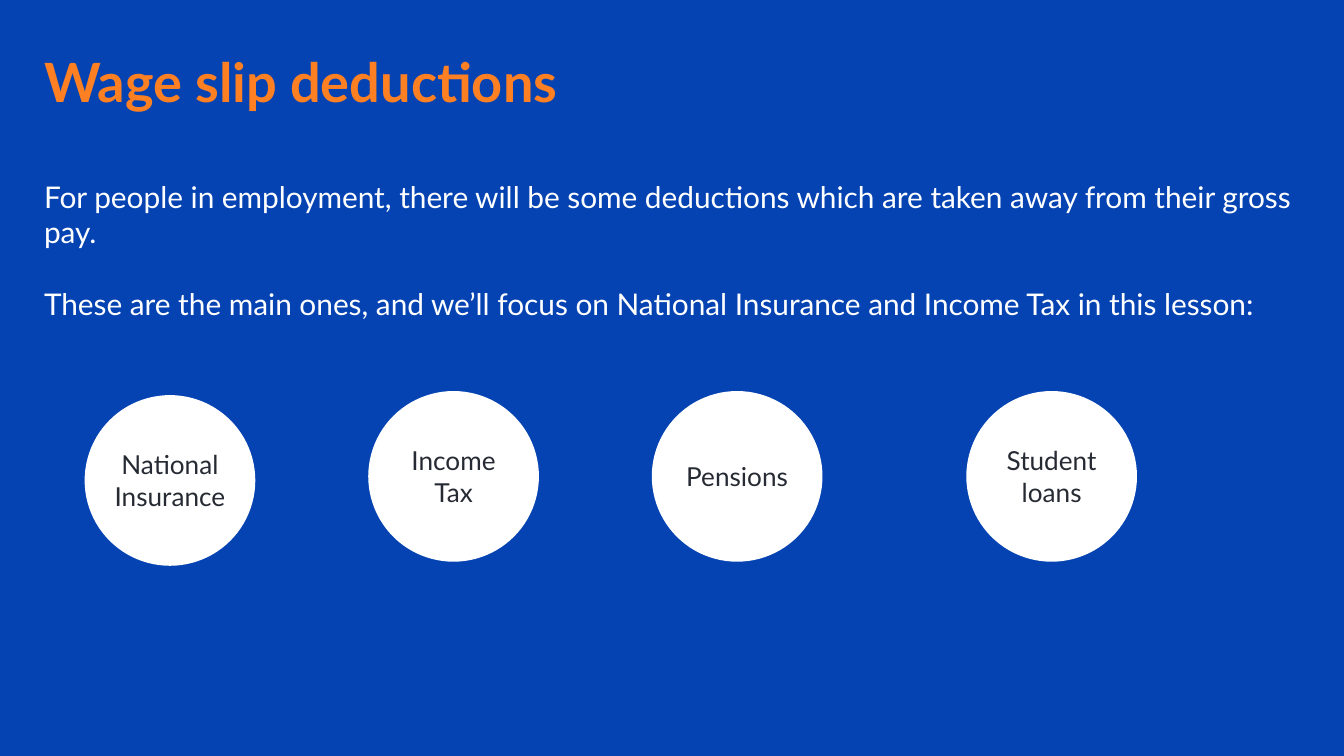
from pptx import Presentation
from pptx.dml.color import RGBColor
from pptx.enum.shapes import MSO_SHAPE
from pptx.enum.text import MSO_ANCHOR, PP_ALIGN
from pptx.util import Inches, Pt

COLORS = {"back": "0543B3", "title": "FF8022", "white": "FFFFFF", "ink": "262A33"}
FONT = "Lato"
TEXT = [
    ("Wage slip deductions", 29, "title", True, 0),
    ("For people in employment, there will be some deductions which are "
     "taken away from their gross pay.", 16, "white", False, 34.8),
    ("These are the main ones, and we’ll focus on National Insurance and "
     "Income Tax in this lesson:", 16, "white", False, 19.2),
]
CIRCLES = [
    (["National Insurance"], 0.63, 2.94, 0.67),
    (["Income", "Tax"], 2.74, 2.91, 0.67),
    (["Pensions"], 4.85, 2.91, 0.44),
    (["Student loans"], 7.19, 2.91, 0.67),
]
SIZE = 1.27


def color(name):
    return RGBColor.from_string(COLORS[name])


def add_text(shapes, left, top, width, height, items, align):
    box = shapes.add_textbox(*map(Inches, (left, top, width, height)))
    frame = box.text_frame
    frame.word_wrap = True
    frame.vertical_anchor = MSO_ANCHOR.TOP
    frame.margin_left = frame.margin_right = Inches(0.1)
    frame.margin_top = frame.margin_bottom = Inches(0.1)
    for i, (text, size, tone, bold, gap) in enumerate(items):
        para = frame.add_paragraph() if i else frame.paragraphs[0]
        para.text = text
        para.alignment = align
        if gap:
            para.space_before = Pt(gap)
        font = para.font
        font.name, font.size, font.bold = FONT, Pt(size), bold
        font.color.rgb = color(tone)


def add_circle(slide, lines, left, top, height):
    shapes = slide.shapes.add_group_shape().shapes
    circle = shapes.add_shape(MSO_SHAPE.OVAL, *map(Inches, (left, top, SIZE, SIZE)))
    circle.shadow.inherit = False
    circle.fill.solid()
    circle.fill.fore_color.rgb = color("white")
    circle.line.fill.background()
    items = [(line, 14, "ink", False, 0) for line in lines]
    middle = top + (SIZE - height) / 2
    add_text(shapes, left, middle, SIZE, height, items, PP_ALIGN.CENTER)


def main():
    deck = Presentation()
    deck.slide_width = Inches(10)
    deck.slide_height = Inches(10 * 9 / 16)
    slide = deck.slides.add_slide(deck.slide_layouts[6])
    slide.background.fill.solid()
    slide.background.fill.fore_color.rgb = color("back")
    add_text(slide.shapes, 0.23, 0.26, 9.53, 2.26, TEXT, PP_ALIGN.LEFT)
    for circle in CIRCLES:
        add_circle(slide, *circle)
    deck.save("out.pptx")


if __name__ == "__main__":
    main()
